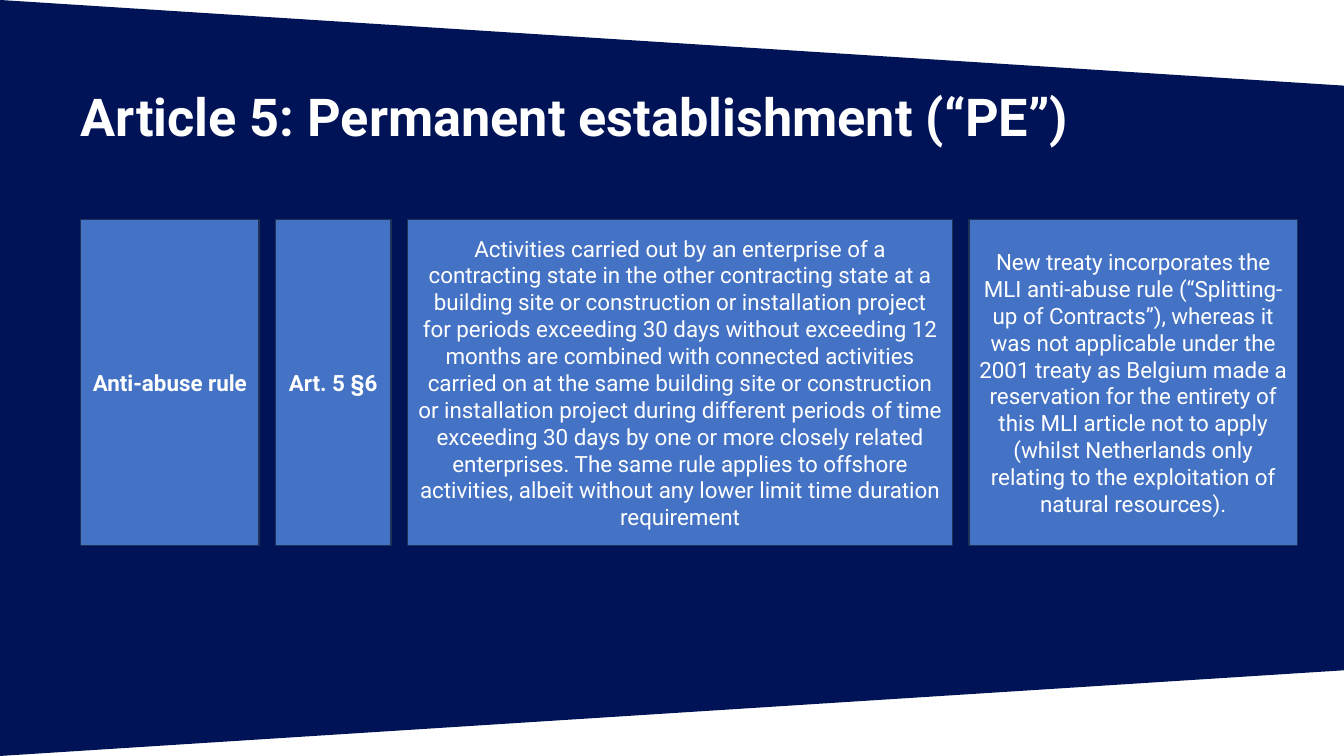
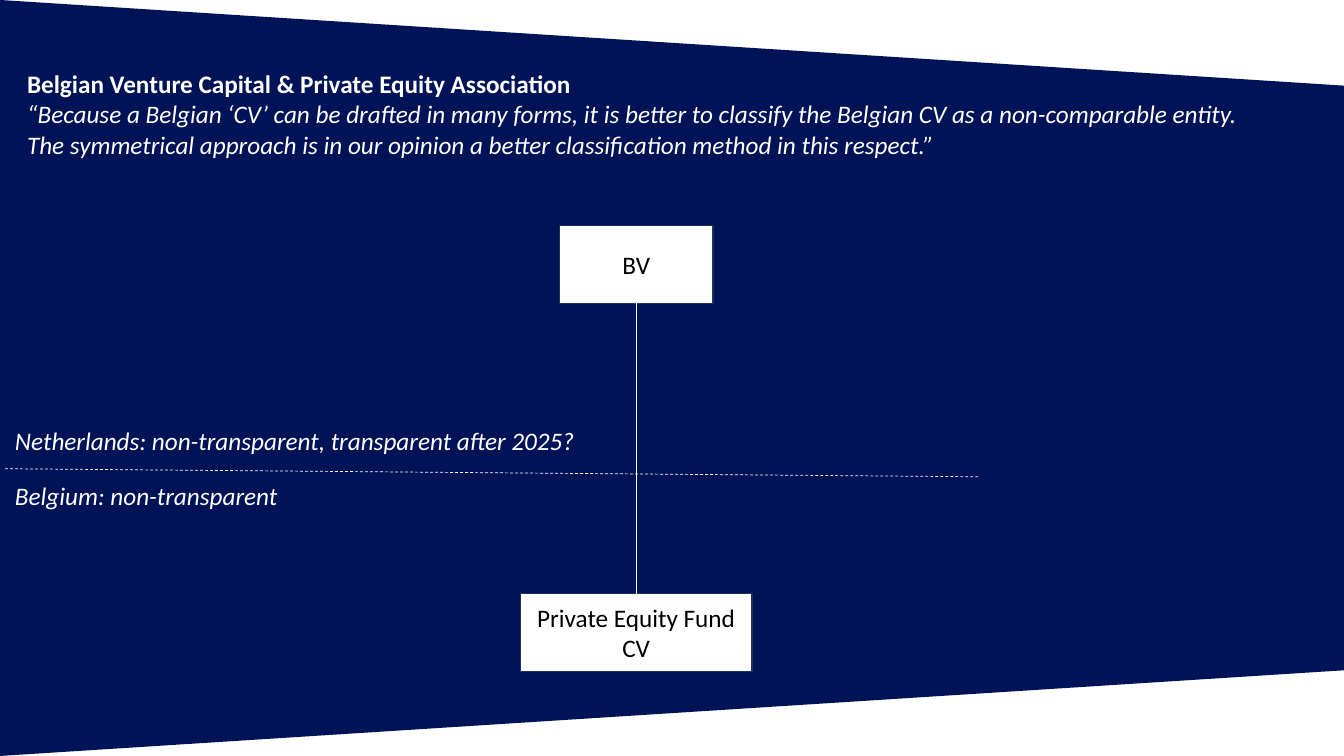
from dataclasses import dataclass, field
from typing import Any

from lxml.etree import SubElement
from pptx import Presentation
from pptx.dml.color import RGBColor
from pptx.enum.dml import MSO_LINE_DASH_STYLE as Dash
from pptx.enum.shapes import MSO_CONNECTOR as Connector
from pptx.enum.shapes import MSO_SHAPE as Preset
from pptx.enum.text import MSO_ANCHOR as Anchor
from pptx.enum.text import PP_ALIGN as Align
from pptx.oxml.ns import qn
from pptx.util import Emu, Pt

EMU_PER_PX = 9144  # 100 px to the inch
PAGE_WIDTH, PAGE_HEIGHT = 1333, 750
BAND_POINTS = [(0, 0), (PAGE_WIDTH, 85), (PAGE_WIDTH, 665), (0, PAGE_HEIGHT)]
COLORS = {
    "band": "011357",
    "card": "4472C4",
    "outline": "1E3256",
    "white": "FFFFFF",
    "black": "000000",
}

TITLE = {"name": "Roboto", "size": Pt(37.3), "bold": True, "color": "white"}
CARD = {"name": "Roboto", "size": Pt(16), "color": "white"}
CARD_LABEL = CARD | {"bold": True}
ENTITY = {"name": "Calibri", "size": Pt(18), "color": "black"}
NOTE = ENTITY | {"color": "white", "italic": True}
SOURCE = ENTITY | {"color": "white", "bold": True}

CARD_LEFT, CARD_TOP, CARD_HEIGHT, CARD_GAP = 80, 218, 323, 16


@dataclass(frozen=True)
class Line:
    text: str
    style: dict[str, Any]


@dataclass(frozen=True)
class Block:
    left: int
    top: int
    width: int
    height: int
    lines: list[Line] = field(default_factory=list)


@dataclass(frozen=True)
class Card:
    width: int
    line: Line


CARDS = [
    Card(177, Line("Anti-abuse rule", CARD_LABEL)),
    Card(115, Line("Art. 5 §6", CARD_LABEL)),
    Card(541, Line(
        "Activities carried out by an enterprise of a contracting state in the other "
        "contracting state at a building site or construction or installation project "
        "for periods exceeding 30 days without exceeding 12 months are combined with "
        "connected activities carried on at the same building site or construction or "
        "installation project during different periods of time exceeding 30 days by one "
        "or more closely related enterprises. The same rule applies to offshore "
        "activities, albeit without any lower limit time duration requirement", CARD)),
    Card(326, Line(
        "New treaty incorporates the MLI anti-abuse rule (“Splitting-up of Contracts”), "
        "whereas it was not applicable under the 2001 treaty as Belgium made a "
        "reservation for the entirety of this MLI article not to apply (whilst "
        "Netherlands only relating to the exploitation of natural resources).", CARD)),
]

BV = Block(555, 224, 152, 77, [Line("BV", ENTITY)])
FUND = Block(516, 589, 230, 77, [Line("Private Equity Fund", ENTITY), Line("CV", ENTITY)])
NOTES = [
    Block(17, 63, 1247, 131, [
        Line("Belgian Venture Capital & Private Equity Association", SOURCE),
        Line("“Because a Belgian ‘CV’ can be drafted in many forms, it is better to "
             "classify the Belgian CV as a non-comparable entity.", NOTE),
        Line("The symmetrical approach is in our opinion a better classification "
             "method in this respect.”", NOTE),
    ]),
    Block(5, 417, 582, 40,
          [Line("Netherlands: non-transparent, transparent after 2025?", NOTE)]),
    Block(5, 472, 297, 40, [Line("Belgium: non-transparent", NOTE)]),
]


def px(length: int) -> Emu:
    return Emu(length * EMU_PER_PX)


def color(name: str) -> RGBColor:
    return RGBColor.from_string(COLORS[name])


def frame(block: Block) -> tuple[Emu, ...]:
    return tuple(px(n) for n in (block.left, block.top, block.width, block.height))


def write(box: Any, lines: list[Line], align: Align, anchor: Anchor) -> None:
    text_frame = box.text_frame
    text_frame.word_wrap = True
    text_frame.vertical_anchor = anchor
    for index, line in enumerate(lines):
        para = text_frame.add_paragraph() if index else text_frame.paragraphs[0]
        para.alignment = align
        span = para.add_run()
        span.text = line.text
        for key, value in line.style.items():
            if key == "color":
                span.font.color.rgb = color(value)
            else:
                setattr(span.font, key, value)


def add_text(page: Any, block: Block, anchor: Anchor = Anchor.TOP) -> Any:
    box = page.shapes.add_textbox(*frame(block))
    write(box, block.lines, Align.LEFT, anchor)
    return box


def add_box(page: Any, block: Block, fill: str) -> Any:
    """Draw an outlined rectangle with centred text."""
    box = page.shapes.add_shape(Preset.RECTANGLE, *frame(block))
    box.shadow.inherit = False
    box.fill.solid()
    box.fill.fore_color.rgb = color(fill)
    box.line.color.rgb = color("outline")
    box.line.width = Pt(1)
    write(box, block.lines, Align.CENTER, Anchor.MIDDLE)
    return box


def add_line(page: Any, start: tuple[int, int], end: tuple[int, int]) -> Any:
    line = page.shapes.add_connector(
        Connector.STRAIGHT, *(px(n) for n in (*start, *end)))
    line.line.color.rgb = color("white")
    line.line.width = Pt(0.5)
    SubElement(line._element.spPr, qn("a:effectLst"))
    return line


def add_page(deck: Any) -> Any:
    """Add a blank page with the slanted band behind its content."""
    page = deck.slides.add_slide(deck.slide_layouts[6])
    builder = page.shapes.build_freeform(*BAND_POINTS[0], scale=EMU_PER_PX)
    builder.add_line_segments(BAND_POINTS[1:], close=True)
    band = builder.convert_to_shape()
    band.shadow.inherit = False
    band.fill.solid()
    band.fill.fore_color.rgb = color("band")
    band.line.fill.background()
    return page


def add_title(page: Any, text: str) -> None:
    box = add_text(page, Block(80, 1, 1207, 145, [Line(text, TITLE)]), Anchor.BOTTOM)
    for side in ("left", "top", "right", "bottom"):
        setattr(box.text_frame, f"margin_{side}", 0)
    box.text_frame.paragraphs[0].line_spacing = Pt(40)


def add_article_page(deck: Any) -> None:
    page = add_page(deck)
    add_title(page, "Article 5: Permanent establishment (“PE”)")
    left = CARD_LEFT
    for card in CARDS:
        add_box(page, Block(left, CARD_TOP, card.width, CARD_HEIGHT, [card.line]), "card")
        left += card.width + CARD_GAP


def add_structure_page(deck: Any) -> None:
    page = add_page(deck)
    border = add_line(page, (5, 465), (970, 473))
    border.line.dash_style = Dash.DASH
    bv, fund = (add_box(page, block, "white") for block in (BV, FUND))
    center = BV.left + BV.width // 2
    holding = add_line(page, (center, BV.top + BV.height), (center, FUND.top))
    holding.begin_connect(bv, 2)
    holding.end_connect(fund, 0)
    for note in NOTES:
        add_text(page, note)


def main() -> None:
    deck = Presentation()
    deck.slide_width, deck.slide_height = px(PAGE_WIDTH), px(PAGE_HEIGHT)
    add_article_page(deck)
    add_structure_page(deck)
    deck.save("out.pptx")


if __name__ == "__main__":
    main()
